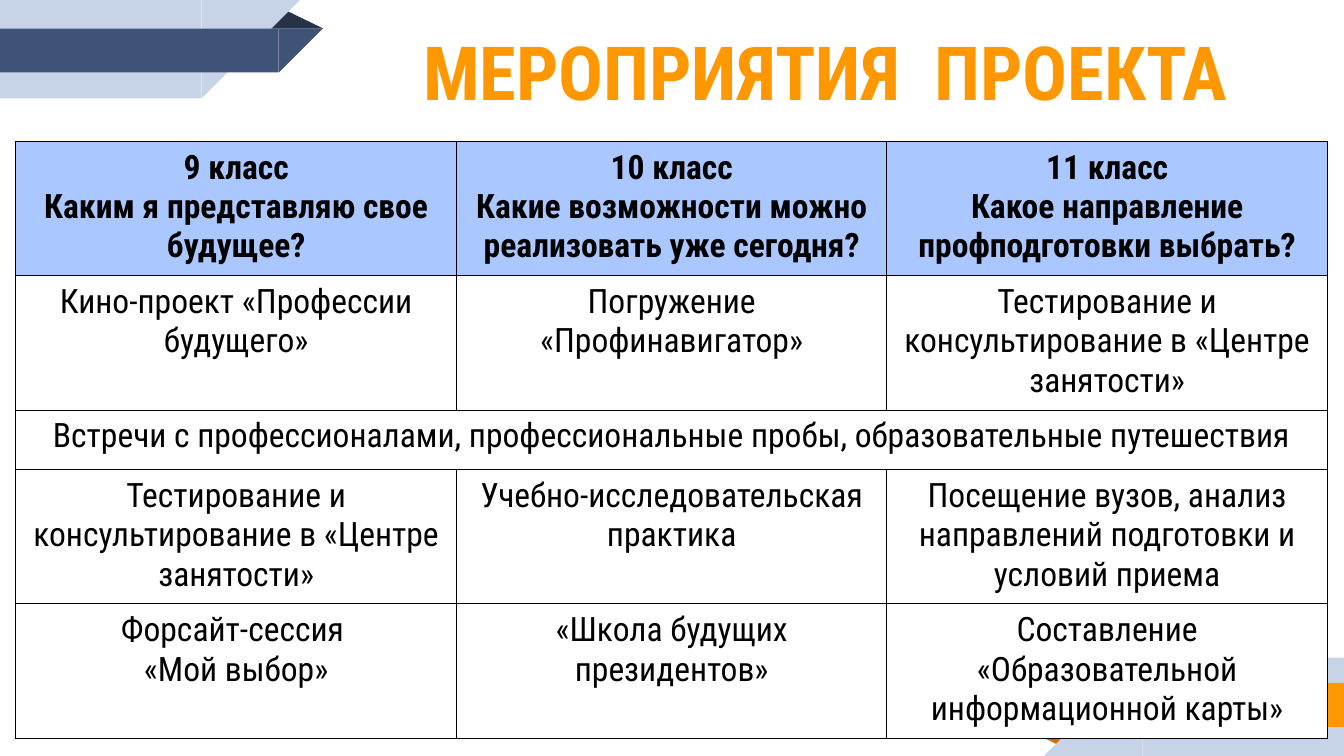
from lxml import etree
from pptx import Presentation, util as u
from pptx.dml.color import RGBColor
from pptx.enum import shapes, text
from pptx.oxml.ns import qn

FONT = "Roboto Condensed"
KINDS = shapes.MSO_SHAPE


def color(value):
    return RGBColor.from_string(value)


def add_span(para, words, size, shade, bold):
    para.alignment = text.PP_ALIGN.CENTER
    span = para.add_run()
    span.text = words
    span.font.name = FONT
    span.font.size = u.Pt(size)
    span.font.bold = bold
    span.font.color.rgb = color(shade)


deck = Presentation()
deck.slide_width = u.Cm(25.4)
deck.slide_height = u.Cm(14.29)
page = deck.slides.add_slide(deck.slide_layouts[6])

ribbon_parts = [
    (KINDS.ISOSCELES_TRIANGLE, 19.3, 13.74, 1.09, 0.36, "D26F00", 180, False),
    (KINDS.RECTANGLE, 21.59, 12.43, 3.81, 1.86, "C7D3E6", 0, False),
    (KINDS.RIGHT_TRIANGLE, 19.73, 12.43, 1.86, 1.86, "C7D3E6", 0, True),
    (KINDS.RECTANGLE, 20.13, 12.91, 5.27, 0.83, "FF9800", 0, False),
    (KINDS.RIGHT_TRIANGLE, 19.3, 12.91, 0.83, 0.83, "FF9800", 0, True),
    (KINDS.ISOSCELES_TRIANGLE, 5.02, 0.18, 1.09, 0.36, "263248", 0, False),
    (KINDS.RECTANGLE, 0, 0, 3.81, 1.86, "C7D3E6", 0, False),
    (KINDS.RIGHT_TRIANGLE, 3.81, 0, 1.86, 1.86, "C7D3E6", 180, True),
    (KINDS.RECTANGLE, 0, 0.54, 5.27, 0.83, "3F5378", 0, False),
    (KINDS.RIGHT_TRIANGLE, 5.27, 0.54, 0.83, 0.83, "3F5378", 180, True),
]
for kind, left, top, width, height, shade, turn, flipped in ribbon_parts:
    part = page.shapes.add_shape(kind, u.Cm(left), u.Cm(top), u.Cm(width), u.Cm(height))
    part.shadow.inherit = False
    part.fill.solid()
    part.fill.fore_color.rgb = color(shade)
    part.line.fill.background()
    part.rotation = turn
    if flipped:
        part.element.spPr.find(qn("a:xfrm")).set("flipH", "1")
    if kind == KINDS.ISOSCELES_TRIANGLE:
        part.adjustments[0] = 0.32

title = page.shapes.add_textbox(u.Cm(6.3), u.Cm(-0.28), u.Cm(18.59), u.Cm(3.23))
frame = title.text_frame
frame.word_wrap = True
frame.vertical_anchor = text.MSO_ANCHOR.MIDDLE
frame.margin_left = frame.margin_right = u.Cm(0.25)
frame.margin_top = frame.margin_bottom = u.Cm(0.25)
add_span(frame.paragraphs[0], "МЕРОПРИЯТИЯ  ПРОЕКТА", 40, "FF9800", True)

rows = [
    [
        ["9 класс", "Каким я представляю свое будущее?"],
        ["10 класс", "Какие возможности можно реализовать уже сегодня?"],
        ["11 класс", "Какое направление профподготовки выбрать?"],
    ],
    [
        ["Кино-проект «Профессии будущего»"],
        ["Погружение «Профинавигатор»"],
        ["Тестирование и консультирование в «Центре занятости»"],
    ],
    [
        ["Встречи с профессионалами, профессиональные пробы, образовательные путешествия"],
        [],
        [],
    ],
    [
        ["Тестирование и консультирование в «Центре занятости»"],
        ["Учебно-исследовательская практика"],
        ["Посещение вузов, анализ направлений подготовки и условий приема"],
    ],
    [
        ["Форсайт-сессия ", "«Мой выбор»"],
        ["«Школа будущих президентов»"],
        ["Составление «Образовательной информационной карты»"],
    ],
]
widths = [8.33, 8.13, 8.33]
heights = [2.49, 2.49, 1.12, 2.49, 2.49]
holder = page.shapes.add_table(
    len(rows), len(widths), u.Cm(0.3), u.Cm(2.67), u.Cm(sum(widths)), u.Cm(sum(heights))
)
table = holder.table
table.first_row = False
table.horz_banding = False
for column, width in zip(table.columns, widths):
    column.width = u.Cm(width)
for row, height in zip(table.rows, heights):
    row.height = u.Cm(height)
table.cell(2, 0).merge(table.cell(2, 2))

for row_index, row in enumerate(rows):
    header = row_index == 0
    for column_index, lines in enumerate(row):
        cell = table.cell(row_index, column_index)
        properties = cell._tc.get_or_add_tcPr()
        for side in ("a:lnL", "a:lnR", "a:lnT", "a:lnB"):
            border = etree.SubElement(properties, qn(side), w=str(u.Pt(0.75)))
            paint = etree.SubElement(border, qn("a:solidFill"))
            etree.SubElement(paint, qn("a:srgbClr"), val="000000")
        cell.fill.solid()
        cell.fill.fore_color.rgb = color("ABC7FF" if header else "FFFFFF")
        for line_index, words in enumerate(lines):
            frame = cell.text_frame
            para = frame.add_paragraph() if line_index else frame.paragraphs[0]
            add_span(para, words, 18, "000000", header)

deck.save("out.pptx")
